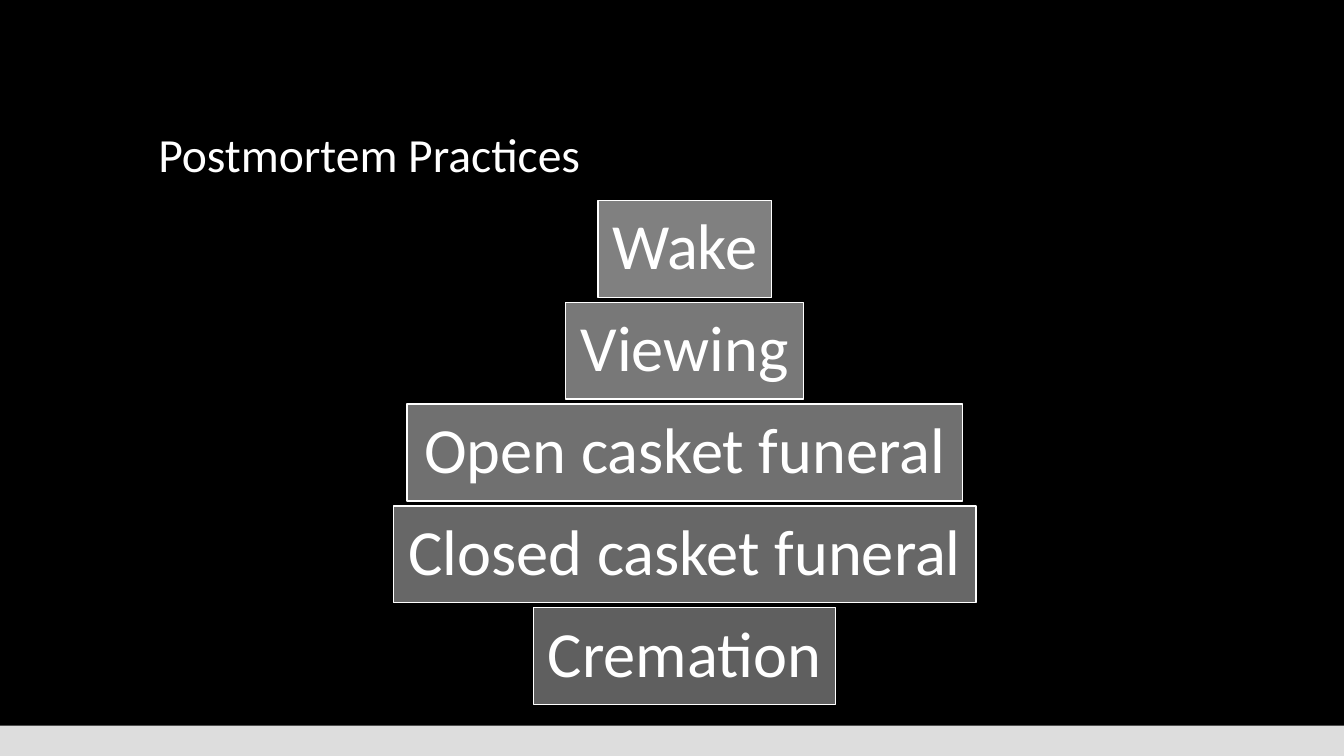
from pptx import Presentation
from pptx.dml.color import RGBColor
from pptx.enum.shapes import MSO_SHAPE
from pptx.enum.text import MSO_ANCHOR, MSO_AUTO_SIZE, PP_ALIGN
from pptx.util import Inches, Pt

RECT = MSO_SHAPE.RECTANGLE
LEFT, CENTER = PP_ALIGN.LEFT, PP_ALIGN.CENTER
MIDDLE, BOTTOM = MSO_ANCHOR.MIDDLE, MSO_ANCHOR.BOTTOM
FONT = "Calibri"

COLORS = {
    "back": "000000",
    "text": "FFFFFF",
    "strip": "DDDDDD",
    "wake": "808080",
    "viewing": "787878",
    "open": "707070",
    "closed": "676767",
    "cremation": "5F5F5F",
}

# Text, width and colour of each box, from top to bottom
BOXES = [
    ("Wake", 1.72, "wake"),
    ("Viewing", 2.36, "viewing"),
    ("Open casket funeral", 5.51, "open"),
    ("Closed casket funeral", 5.78, "closed"),
    ("Cremation", 3, "cremation"),
]
MID, TOP, HEIGHT, STEP = 6.79, 1.99, 0.96, 1.01


def color(name):
    return RGBColor.from_string(COLORS[name])


def set_text(shape, text, size, align, anchor):
    frame = shape.text_frame
    frame.text = text
    frame.auto_size = MSO_AUTO_SIZE.NONE
    frame.vertical_anchor = anchor
    para = frame.paragraphs[0]
    para.alignment = align
    para.line_spacing = 0.9
    para.font.name = FONT
    para.font.size = Pt(size)
    para.font.color.rgb = color("text")


def add_title(slide, text):
    title = slide.shapes.title
    title.left, title.top = Inches(1.47), Inches(0.51)
    title.width, title.height = Inches(10.4), Inches(1.35)
    set_text(title, text, 34, LEFT, BOTTOM)


def add_rect(slide, left, top, width, height, fill):
    rect = slide.shapes.add_shape(
        RECT, Inches(left), Inches(top), Inches(width), Inches(height))
    rect.shadow.inherit = False
    rect.fill.solid()
    rect.fill.fore_color.rgb = color(fill)
    rect.line.fill.background()
    return rect


def add_box(slide, top, text, width, fill):
    box = add_rect(slide, MID - width / 2, top, width, HEIGHT, fill)
    box.line.color.rgb = color("text")
    box.line.width = Pt(1)
    set_text(box, text, 46, CENTER, MIDDLE)
    frame = box.text_frame
    frame.word_wrap = False
    frame.margin_left = frame.margin_right = Inches(0.13)
    frame.margin_top = frame.margin_bottom = Inches(0.13)


def main():
    deck = Presentation()
    deck.slide_width, deck.slide_height = Inches(13.33), Inches(7.5)
    slide = deck.slides.add_slide(deck.slide_layouts[5])
    slide.background.fill.solid()
    slide.background.fill.fore_color.rgb = color("back")

    # Bottom strip and title
    add_rect(slide, 0, 7.2, 13.33, 0.3, "strip")
    add_title(slide, "Postmortem Practices")

    # Stack of practices
    for row, box in enumerate(BOXES):
        add_box(slide, TOP + row * STEP, *box)

    deck.save("out.pptx")


if __name__ == "__main__":
    main()
